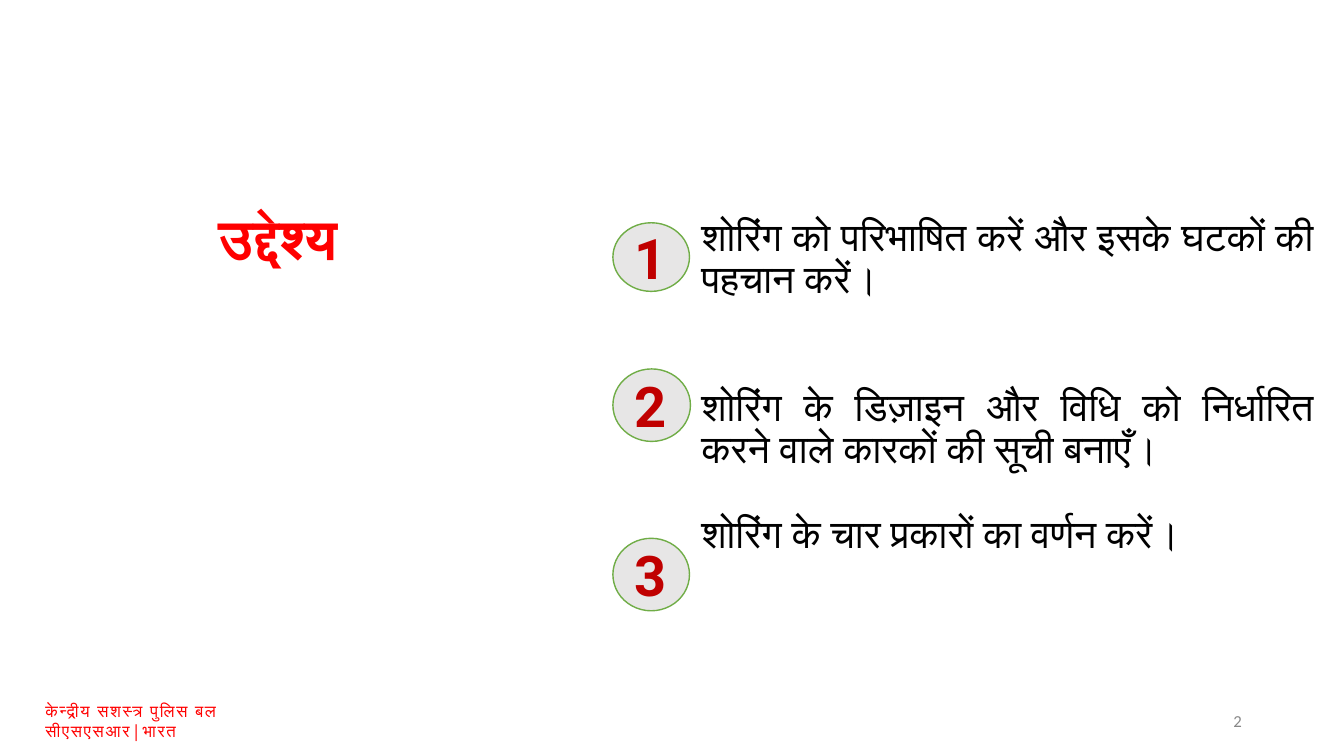
from pptx import Presentation
from pptx.dml.color import RGBColor
from pptx.enum import shapes, text
from pptx.util import Pt

# Content
TITLE = "उद्देश्य"
# Objective, space before it
OBJECTIVES = [
    ("शोरिंग को परिभाषित करें और इसके घटकों की पहचान करें।", 0),
    ("शोरिंग के डिज़ाइन और विधि को निर्धारित करने वाले कारकों की सूची बनाएँ।", 60.8),
    ("शोरिंग के चार प्रकारों का वर्णन करें।", 30.4),
]
# Left, top, width, height of each number badge
BADGES = [
    (437.8, 159.1, 54.7, 49),
    (437.8, 263.5, 55.4, 51.8),
    (437.8, 384.5, 54.7, 51.8),
]
FOOTER = "केन्द्रीय सशस्त्र पुलिस बल सीएसएसआर|भारत"
PAGE_NUMBER = "2"

THEME = {
    "heading_font": "Roboto", "footer_font": "Open Sans", "page_font": "Calibri",
    "red": "FF0000", "number": "C00000", "ink": "000000", "grey": "888888",
    "badge": "E7E6E6", "badge_line": "70AD47",
    "large": 40, "body": 28, "small": 12,
}
ALIGN = text.PP_ALIGN
MIDDLE = text.MSO_ANCHOR.MIDDLE


def color(name):
    return RGBColor.from_string(THEME[name])


def set_frame(frame, anchor=text.MSO_ANCHOR.TOP, inset=(7.2, 3.6)):
    frame.word_wrap = True
    frame.vertical_anchor = anchor
    frame.margin_left = frame.margin_right = Pt(inset[0])
    frame.margin_top = frame.margin_bottom = Pt(inset[1])
    return frame


def add_frame(box, **layout):
    return set_frame(slide.shapes.add_textbox(*map(Pt, box)).text_frame, **layout)


def write(paragraph, words, font, size, ink, align=ALIGN.LEFT, bold=False):
    run = paragraph.add_run()
    run.text = words
    paragraph.alignment = align
    style = paragraph.font
    style.name, style.size, style.bold = THEME[font], Pt(THEME[size]), bold
    style.color.rgb = color(ink)
    return run


prs = Presentation()
prs.slide_width, prs.slide_height = Pt(960), Pt(540)
slide = prs.slides.add_slide(prs.slide_layouts[6])

# Footer
footer = add_frame((29.5, 497.5, 182.9, 20.9), inset=(2.9, 2.9))
footer_run = write(footer.paragraphs[0], FOOTER, "footer_font", "small", "red")
footer_run._r.get_or_add_rPr().set("spc", "120")

# Title
title = add_frame((23, 138.2, 351.4, 68.4), anchor=MIDDLE).paragraphs[0]
write(title, TITLE, "heading_font", "large", "red", ALIGN.CENTER, True)
title.line_spacing = 0.9

# Objectives
objectives = add_frame((493.9, 151.9, 451.4, 324))
for index, (words, gap) in enumerate(OBJECTIVES):
    objective = objectives.add_paragraph() if index else objectives.paragraphs[0]
    write(objective, words, "heading_font", "body", "ink", ALIGN.JUSTIFY)
    objective.line_spacing = 0.9
    if gap:
        objective.space_before = Pt(gap)

# Number badges
for number, box in enumerate(BADGES, 1):
    badge = slide.shapes.add_shape(shapes.MSO_SHAPE.OVAL, *map(Pt, box))
    badge.shadow.inherit = False
    badge.fill.solid()
    badge.fill.fore_color.rgb = color("badge")
    badge.line.color.rgb = color("badge_line")
    badge.line.width = Pt(1)
    label = set_frame(badge.text_frame, anchor=MIDDLE).paragraphs[0]
    write(label, str(number), "heading_font", "large", "number", ALIGN.JUSTIFY, True)

# Page number
page = add_frame((678.2, 500.4, 216, 28.8), anchor=MIDDLE).paragraphs[0]
write(page, PAGE_NUMBER, "page_font", "small", "grey", ALIGN.RIGHT)

prs.save("out.pptx")
